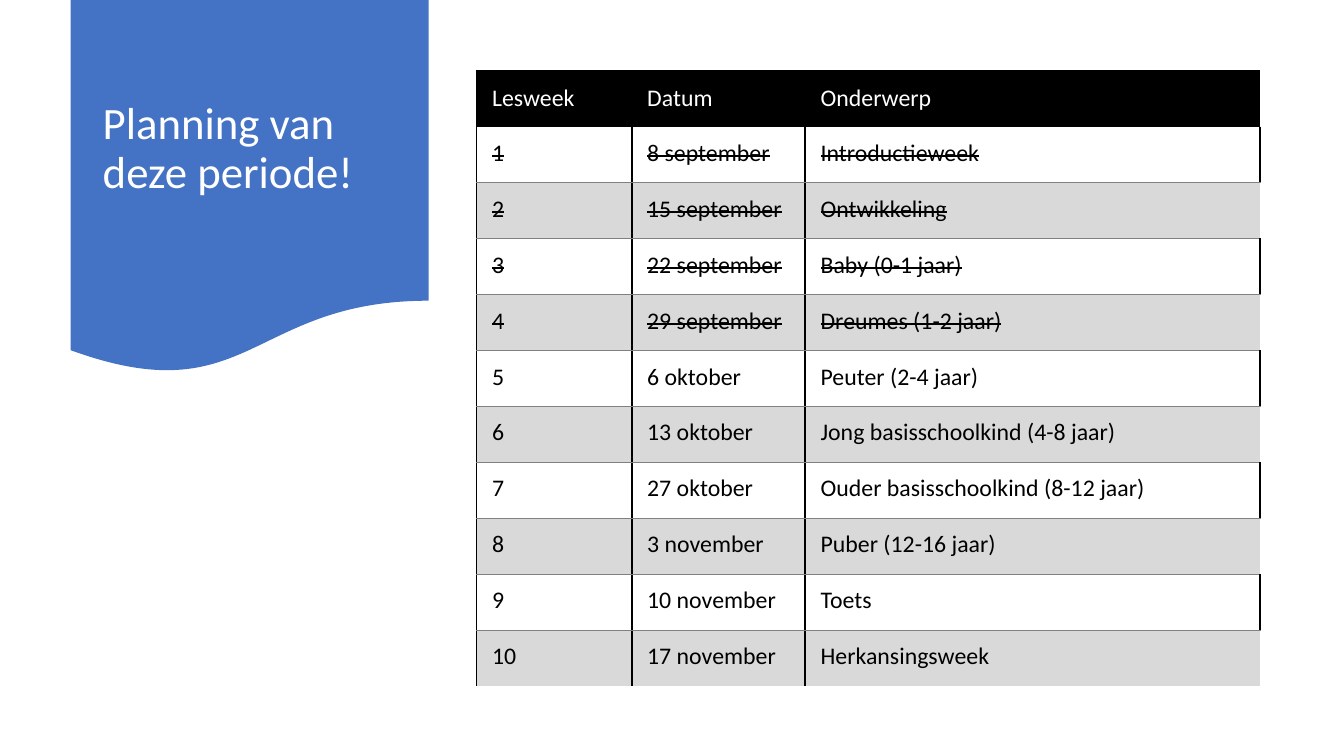
from lxml.etree import SubElement
from pptx import Presentation
from pptx.dml.color import RGBColor
from pptx.enum.shapes import MSO_SHAPE
from pptx.enum.text import MSO_ANCHOR
from pptx.oxml.ns import qn
from pptx.util import Cm, Pt

COLOURS = {"banner": "4472C4", "white": "FFFFFF", "black": "000000",
           "band": "D9D9D9", "rule": "808080"}
NO_STYLE = "{2D5ABB26-0587-4C30-8999-92F81FD0307C}"
HEADINGS = ("Lesweek", "Datum", "Onderwerp")
LESSONS = [
    ("8 september", "Introductieweek"),
    ("15 september", "Ontwikkeling"),
    ("22 september", "Baby (0-1 jaar)"),
    ("29 september", "Dreumes (1-2 jaar)"),
    ("6 oktober", "Peuter (2-4 jaar)"),
    ("13 oktober", "Jong basisschoolkind (4-8 jaar)"),
    ("27 oktober", "Ouder basisschoolkind (8-12 jaar)"),
    ("3 november", "Puber (12-16 jaar)"),
    ("10 november", "Toets"),
    ("17 november", "Herkansingsweek"),
]
WEEKS_DONE = 4
COLUMN_WIDTHS = (3.91, 4.37, 11.46)
ROW_HEIGHT = 1.41
EDGE = ("black", 1.5)
RULE = ("rule", 0.5)


def colour(name):
    return RGBColor.from_string(COLOURS[name])


def write(frame, text, size=17, ink="black", strike=False, spacing=None):
    paragraph = frame.paragraphs[0]
    paragraph.line_spacing = spacing
    run = paragraph.add_run()
    run.text = text
    run.font.name = "Calibri"
    run.font.size = Pt(size)
    run.font.color.rgb = colour(ink)
    if strike:
        run.font._element.set("strike", "sngStrike")


def set_borders(cell, borders):
    """Borders map L, R, T and B, in that order, to (colour, points)."""
    properties = cell._tc.get_or_add_tcPr()
    for position, (side, (name, points)) in enumerate(borders.items()):
        line = SubElement(properties, qn(f"a:ln{side}"), w=str(Pt(points)))
        fill = SubElement(line, qn("a:solidFill"))
        SubElement(fill, qn("a:srgbClr"), val=COLOURS[name])
        properties.insert(position, line)


def cell_look(row, column):
    """Return the fill and the borders of a cell."""
    if row == 0:
        top = {"T": EDGE}
        return "black", {"L": EDGE, **top} if column == 0 else top
    if row % 2:
        return None, {"L": EDGE, "R": EDGE, "B": RULE}
    inner = {} if column == len(HEADINGS) - 1 else {"R": EDGE}
    return "band", {"L": EDGE, **inner, "T": RULE}


def add_banner(slide, left, top, width, height):
    banner = slide.shapes.add_shape(MSO_SHAPE.FLOWCHART_DOCUMENT, Cm(left),
                                    Cm(top), Cm(width), Cm(height))
    banner.shadow.inherit = False
    banner.fill.solid()
    banner.fill.fore_color.rgb = colour("banner")
    banner.line.fill.background()

    # Title inside the banner
    title = slide.shapes.add_textbox(Cm(left + 0.56), Cm(top + 0.48),
                                     Cm(width - 1.12), Cm(6.58)).text_frame
    title.word_wrap = True
    title.vertical_anchor = MSO_ANCHOR.MIDDLE
    write(title, "Planning van deze periode!", size=32, ink="white", spacing=0.9)


def add_planning(slide, left, top):
    rows = [HEADINGS] + [(str(week), *lesson)
                         for week, lesson in enumerate(LESSONS, 1)]
    frame = slide.shapes.add_table(len(rows), len(HEADINGS), Cm(left), Cm(top),
                                   Cm(sum(COLUMN_WIDTHS)),
                                   Cm(ROW_HEIGHT * len(rows)))
    planning = frame.table
    planning.horz_banding = False
    planning._tbl.tblPr.find(qn("a:tableStyleId")).text = NO_STYLE
    for column, width in zip(planning.columns, COLUMN_WIDTHS):
        column.width = Cm(width)

    for week, texts in enumerate(rows):
        planning.rows[week].height = Cm(ROW_HEIGHT)
        for column, text in enumerate(texts):
            cell = planning.cell(week, column)
            cell.margin_left = Cm(0.39)
            cell.margin_right = cell.margin_top = cell.margin_bottom = Cm(0.3)
            if week == 0:
                cell.vertical_anchor = MSO_ANCHOR.MIDDLE
            fill, borders = cell_look(week, column)
            if fill:
                cell.fill.solid()
                cell.fill.fore_color.rgb = colour(fill)
            else:
                cell.fill.background()
            set_borders(cell, borders)
            write(cell.text_frame, text, ink="black" if week else "white",
                  strike=1 <= week <= WEEKS_DONE)


def main():
    deck = Presentation()
    deck.slide_width, deck.slide_height = Cm(33.87), Cm(19.05)
    slide = deck.slides.add_slide(deck.slide_layouts[6])
    add_banner(slide, 1.78, 0, 9.02, 9.45)
    add_planning(slide, 12.01, 1.78)
    deck.save("out.pptx")


if __name__ == "__main__":
    main()
